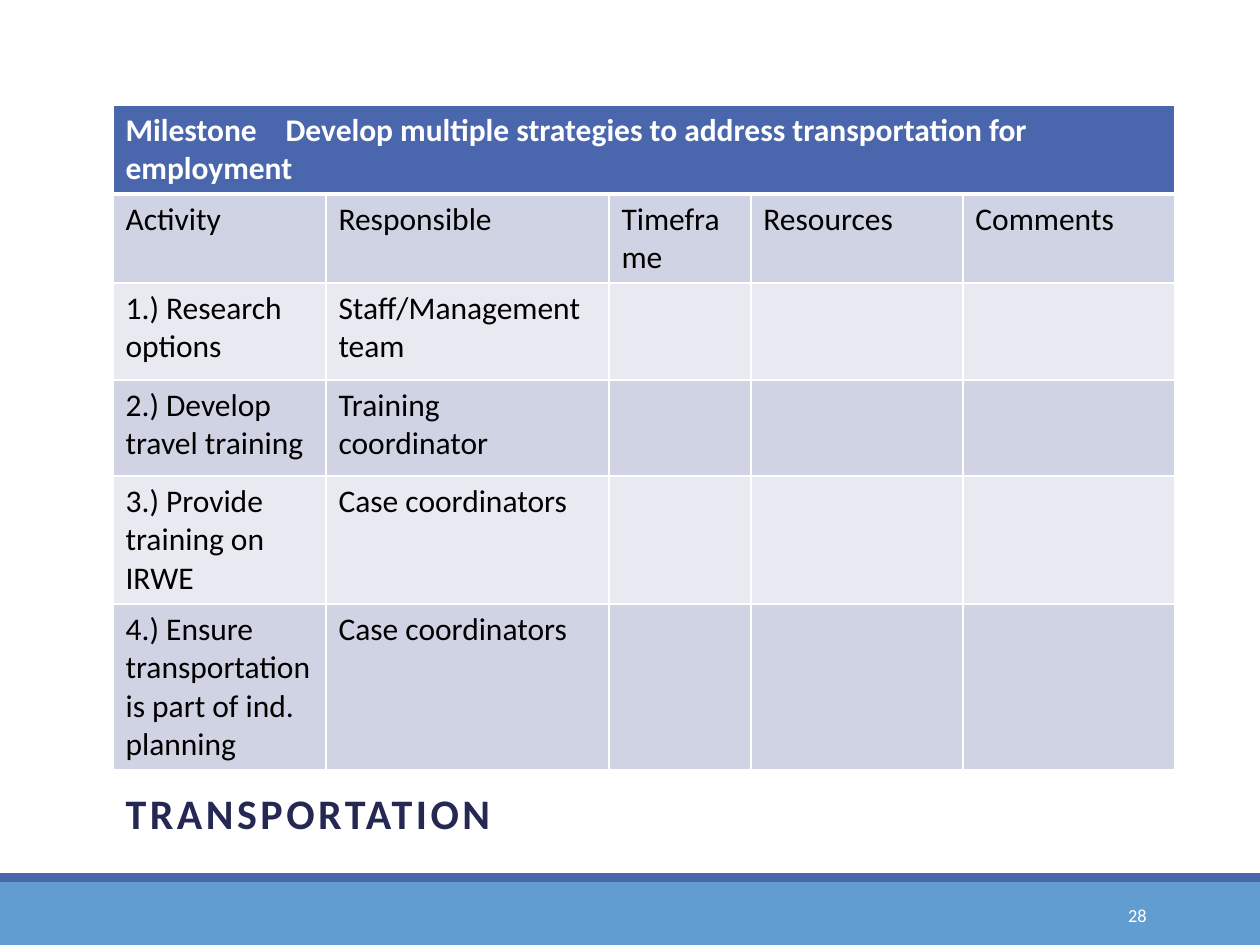
import pptx
import pptx.dml.color
import pptx.enum.shapes
import pptx.enum.text
import pptx.oxml.ns
import pptx.util
from lxml import etree

COLORS = {
    "footer": "629DD1", "accent": "4A66AC", "title": "242852",
    "band_dark": "D0D3E3", "band_light": "E9EAF1",
    "white": "FFFFFF", "black": "000000",
}
FONT = "Calibri"
TITLE = "TRANSPORTATION"
PAGE = "28"
ROWS = [
    ["Milestone\tDevelop multiple strategies to address transportation for employment"],
    ["Activity", "Responsible", "Timeframe", "Resources", "Comments"],
    ["1.) Research options", "Staff/Management team"],
    ["2.) Develop travel training", "Training coordinator"],
    ["3.) Provide training on IRWE", "Case coordinators"],
    ["4.) Ensure transportation is part of ind. planning", "Case coordinators"],
]
COL_WIDTHS = [213, 283, 142, 212, 212]
ROW_HEIGHTS = [89, 89, 97, 96, 128, 166]
TABLE_POS = (113, 105)
BARS = [("footer", (0, 882, 1260, 63)), ("accent", (0, 873, 1260, 9))]
TITLE_BOX = (113, 714, 1040, 126)
PAGE_BOX = (1023, 890, 136, 50)
MILESTONE_TAB = 160


def px(n):
    return pptx.util.Emu(n * 914400 // 126)


def rgb(name):
    return pptx.dml.color.RGBColor.from_string(COLORS[name])


def style(p, size, color, bold=False):
    for r in p.runs:
        r.font.name = FONT
        r.font.size = pptx.util.Pt(size)
        r.font.bold = bold
        r.font.color.rgb = rgb(color)


def sub(parent, tag, **attrs):
    return etree.SubElement(parent, pptx.oxml.ns.qn(tag), **attrs)


def set_borders(cell, widths):
    tcPr = cell._tc.get_or_add_tcPr()
    for i, (side, width) in enumerate(widths.items()):
        ln = sub(tcPr, "a:ln" + side, w=str(pptx.util.Pt(width)))
        sub(sub(ln, "a:solidFill"), "a:srgbClr", val=COLORS["white"])
        tcPr.insert(i, ln)


def add_bars(s):
    for color, box in BARS:
        sp = s.shapes.add_shape(pptx.enum.shapes.MSO_SHAPE.RECTANGLE, *map(px, box))
        sp.shadow.inherit = False
        sp.fill.solid()
        sp.fill.fore_color.rgb = rgb(color)
        sp.line.fill.background()


def add_title(s):
    sp = s.shapes.title
    sp.left, sp.top, sp.width, sp.height = map(px, TITLE_BOX)
    tf = sp.text_frame
    tf.text = TITLE
    tf.vertical_anchor = pptx.enum.text.MSO_ANCHOR.BOTTOM
    tf.margin_bottom = px(2)
    p = tf.paragraphs[0]
    p.alignment = pptx.enum.text.PP_ALIGN.LEFT
    p.line_spacing = 0.8
    style(p, 24, "title", True)
    p.runs[0].font._element.set("spc", "200")


def add_page_number(s):
    tf = s.shapes.add_textbox(*map(px, PAGE_BOX)).text_frame
    tf.word_wrap = True
    tf.vertical_anchor = pptx.enum.text.MSO_ANCHOR.MIDDLE
    tf.text = PAGE
    p = tf.paragraphs[0]
    p.alignment = pptx.enum.text.PP_ALIGN.RIGHT
    style(p, 10.5, "white")


def add_plan_table(s):
    size = (sum(COL_WIDTHS), sum(ROW_HEIGHTS))
    table = s.shapes.add_table(
        len(ROWS), len(COL_WIDTHS), *map(px, TABLE_POS + size)).table
    for col, width in zip(table.columns, COL_WIDTHS):
        col.width = px(width)
    for row, height in zip(table.rows, ROW_HEIGHTS):
        row.height = px(height)
    for i, texts in enumerate(ROWS):
        header = i == 0
        fill = "accent" if header else "band_dark" if i % 2 else "band_light"
        for j in range(len(COL_WIDTHS)):
            cell = table.cell(i, j)
            cell.fill.solid()
            cell.fill.fore_color.rgb = rgb(fill)
            set_borders(cell, {"L": 1, "R": 1, "T": 3 if i == 1 else 1,
                               "B": 3 if header else 1})
            cell.text = texts[j] if j < len(texts) else ""
            style(cell.text_frame.paragraphs[0], 18,
                  "white" if header else "black", header)
    table.cell(0, 0).merge(table.cell(0, len(COL_WIDTHS) - 1))
    p = table.cell(0, 0).text_frame.paragraphs[0]
    tabs = sub(p._p.get_or_add_pPr(), "a:tabLst")
    sub(tabs, "a:tab", pos=str(px(MILESTONE_TAB)), algn="l")


def main():
    prs = pptx.Presentation()
    prs.slide_width, prs.slide_height = px(1260), px(945)
    s = prs.slides.add_slide(prs.slide_layouts[5])
    add_bars(s)
    add_title(s)
    add_page_number(s)
    add_plan_table(s)
    prs.save("out.pptx")


if __name__ == "__main__":
    main()
